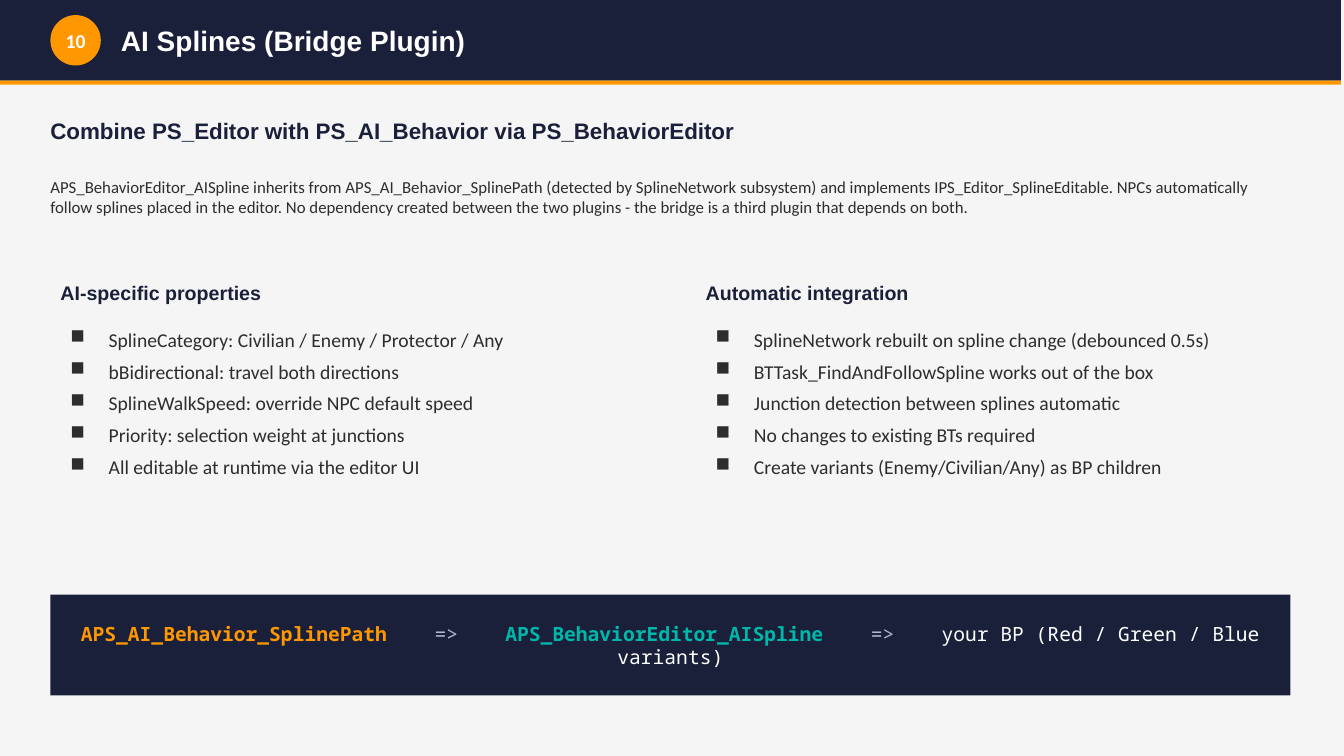
from dataclasses import dataclass

import pptx
import pptx.dml.color
import pptx.enum.shapes
import pptx.enum.text
import pptx.oxml
import pptx.oxml.ns
import pptx.util

EMU_PER_PX = 9144
RECTANGLE = pptx.enum.shapes.MSO_SHAPE.RECTANGLE
OVAL = pptx.enum.shapes.MSO_SHAPE.OVAL
LEFT = pptx.enum.text.PP_ALIGN.LEFT
CENTER = pptx.enum.text.PP_ALIGN.CENTER
MIDDLE = pptx.enum.text.MSO_ANCHOR.MIDDLE
TOP = pptx.enum.text.MSO_ANCHOR.TOP


@dataclass(frozen=True)
class Theme:
    background: str = "F5F5F5"
    navy: str = "1A1F3A"
    orange: str = "FF9800"
    teal: str = "00B8A9"
    mist: str = "B0B8D4"
    ink: str = "2D2D2D"
    white: str = "FFFFFF"
    heading_font: str = "Arial"
    body_font: str = "Calibri"
    code_font: str = "Noto Sans Mono"
    title_size: int = 20
    subtitle_size: int = 16
    item_size: int = 14
    body_size: int = 12


def px(length):
    return pptx.util.Emu(length * EMU_PER_PX)


def rgb(value):
    return pptx.dml.color.RGBColor.from_string(value)


class SlideBuilder:
    def __init__(self, slide, theme):
        self.slide = slide
        self.theme = theme
        slide.background.fill.solid()
        slide.background.fill.fore_color.rgb = rgb(theme.background)

    def block(self, kind, left, top, width, height, color):
        shape = self.slide.shapes.add_shape(kind, px(left), px(top), px(width), px(height))
        shape.shadow.inherit = False
        shape.fill.solid()
        shape.fill.fore_color.rgb = rgb(color)
        shape.line.fill.background()
        return shape

    def text_box(self, left, top, width, height):
        return self.slide.shapes.add_textbox(px(left), px(top), px(width), px(height))

    def frame(self, shape, anchor=MIDDLE, side_inset=0, end_inset=0):
        frame = shape.text_frame
        frame.word_wrap = True
        frame.vertical_anchor = anchor
        frame.margin_left = frame.margin_right = px(side_inset)
        frame.margin_top = frame.margin_bottom = px(end_inset)
        return frame

    def run(self, paragraph, text, font, size, color, bold=False):
        run = paragraph.add_run()
        run.text = text
        run.font.name = font
        run.font.size = pptx.util.Pt(size)
        run.font.color.rgb = rgb(color)
        run.font.bold = bold
        return run

    def line(self, shape, text, font, size, color, bold=False, align=LEFT):
        paragraph = self.frame(shape).paragraphs[0]
        paragraph.alignment = align
        self.run(paragraph, text, font, size, color, bold)

    def bullets(self, left, top, width, height, items):
        frame = self.frame(self.text_box(left, top, width, height), TOP, 10, 5)
        for index, item in enumerate(items):
            paragraph = frame.add_paragraph() if index else frame.paragraphs[0]
            properties = paragraph._p.get_or_add_pPr()
            properties.set("marL", str(px(38)))
            properties.set("indent", str(-px(38)))
            bullet = pptx.oxml.parse_xml(
                f'<a:buChar {pptx.oxml.ns.nsdecls("a")} char="■"/>')
            properties.append(bullet)
            paragraph.space_after = pptx.util.Pt(6)
            self.run(paragraph, item, self.theme.body_font, self.theme.item_size, self.theme.ink)

    def column(self, left, heading, items):
        theme = self.theme
        self.line(self.text_box(left, 270, 600, 40), heading,
                  theme.heading_font, theme.item_size, theme.navy, True)
        self.bullets(left, 320, 600, 300, items)

    def chain(self, shape, links):
        theme = self.theme
        style = theme.code_font, theme.item_size
        paragraph = self.frame(shape).paragraphs[0]
        paragraph.alignment = CENTER
        for index, (name, color, bold) in enumerate(links):
            if index:
                self.wide_space(paragraph)
                self.run(paragraph, "=>", *style, theme.mist)
                self.wide_space(paragraph)
            self.run(paragraph, name, *style, color, bold)

    def wide_space(self, paragraph):
        run = self.run(paragraph, " ", self.theme.code_font, self.theme.item_size, self.theme.mist)
        run._r.get_or_add_rPr().set("spc", "2520")


def main():
    theme = Theme()
    presentation = pptx.Presentation()
    presentation.slide_width = px(1333)
    presentation.slide_height = px(750)
    slide = presentation.slides.add_slide(presentation.slide_layouts[6])
    builder = SlideBuilder(slide, theme)

    builder.block(RECTANGLE, 0, 0, 1330, 80, theme.navy)
    builder.block(RECTANGLE, 0, 80, 1330, 4, theme.orange)
    builder.line(builder.block(OVAL, 50, 15, 50, 50, theme.orange), "10",
                 theme.body_font, theme.item_size, theme.white, True, CENTER)
    builder.line(builder.text_box(120, 15, 1100, 50), "AI Splines (Bridge Plugin)",
                 theme.heading_font, theme.title_size, theme.white, True)
    builder.line(builder.text_box(50, 110, 1230, 40),
                 "Combine PS_Editor with PS_AI_Behavior via PS_BehaviorEditor",
                 theme.heading_font, theme.subtitle_size, theme.navy, True)
    builder.line(builder.text_box(50, 150, 1230, 90),
                 "APS_BehaviorEditor_AISpline inherits from APS_AI_Behavior_SplinePath "
                 "(detected by SplineNetwork subsystem) and implements "
                 "IPS_Editor_SplineEditable. NPCs automatically follow splines placed in "
                 "the editor. No dependency created between the two plugins - the bridge "
                 "is a third plugin that depends on both.",
                 theme.body_font, theme.body_size, theme.ink)

    builder.column(60, "AI-specific properties", [
        "SplineCategory: Civilian / Enemy / Protector / Any",
        "bBidirectional: travel both directions",
        "SplineWalkSpeed: override NPC default speed",
        "Priority: selection weight at junctions",
        "All editable at runtime via the editor UI",
    ])
    builder.column(700, "Automatic integration", [
        "SplineNetwork rebuilt on spline change (debounced 0.5s)",
        "BTTask_FindAndFollowSpline works out of the box",
        "Junction detection between splines automatic",
        "No changes to existing BTs required",
        "Create variants (Enemy/Civilian/Any) as BP children",
    ])

    builder.chain(builder.block(RECTANGLE, 50, 590, 1230, 100, theme.navy), [
        ("APS_AI_Behavior_SplinePath", theme.orange, True),
        ("APS_BehaviorEditor_AISpline", theme.teal, True),
        ("your BP (Red / Green / Blue variants)", theme.white, False),
    ])
    presentation.save("out.pptx")


if __name__ == "__main__":
    main()
